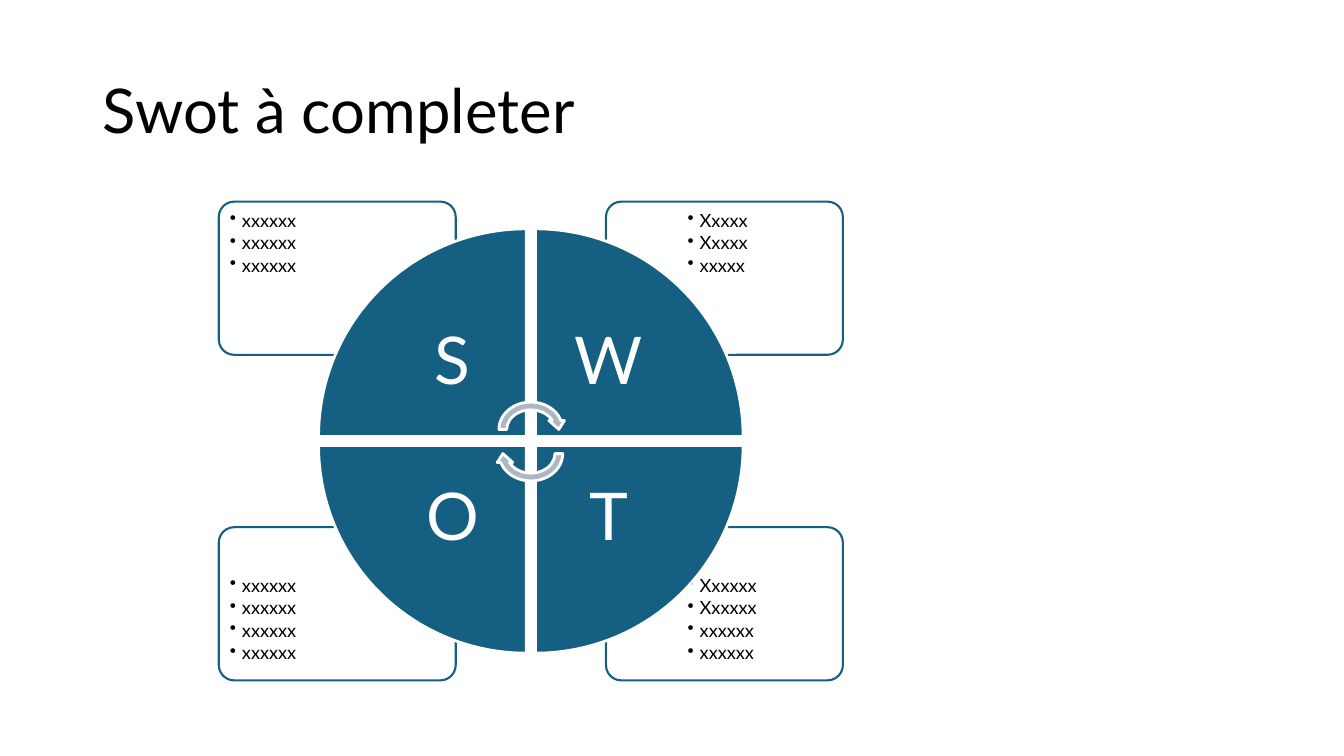
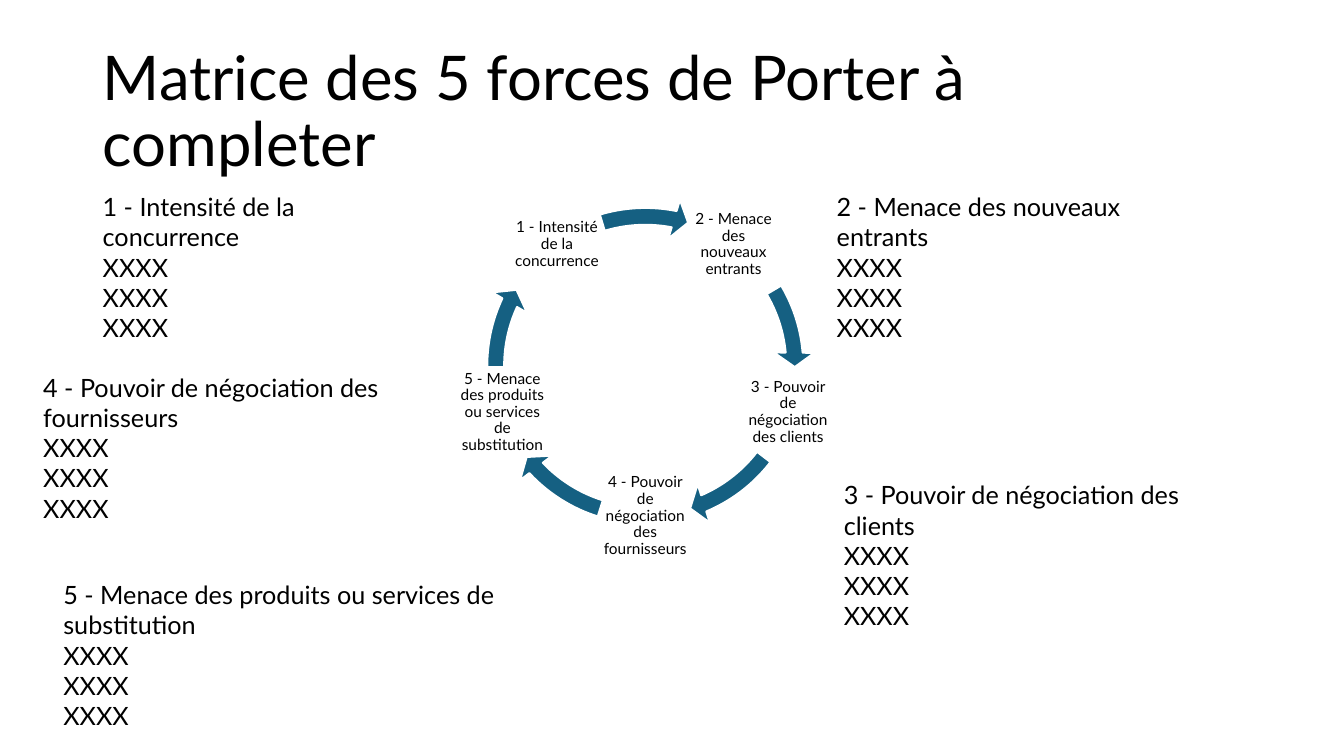
"""Build a SWOT slide and a five forces slide, both ready to be filled in."""
import math

import lxml.etree
import pptx
import pptx.dml.color
import pptx.enum.shapes
import pptx.enum.text
import pptx.oxml.ns
import pptx.util

Inches = pptx.util.Inches
Pt = pptx.util.Pt
SHAPES = pptx.enum.shapes.MSO_SHAPE
ALIGN = pptx.enum.text.PP_ALIGN
ANCHOR = pptx.enum.text.MSO_ANCHOR

FONT = "Lato"
BLACK, WHITE, BLUE, GREY = "000000", "FFFFFF", "156082", "ACB7C1"
TITLE_ONLY = 5
TITLE_BOX = (0.92, 0.4, 11.5, 1.45)

SWOT_TITLE = "Swot à completer"
SWOT = [
    ("S", 0, 0, ["xxxxxx"] * 3),
    ("W", 1, 0, ["Xxxxx", "Xxxxx", "xxxxx"]),
    ("T", 1, 1, ["Xxxxxx", "Xxxxxx", "xxxxxx", "xxxxxx"]),
    ("O", 0, 1, ["xxxxxx"] * 4),
]
WEDGE, WEDGE_GAP, LETTER_BOX = 2.06, 0.09, 1.46
WHEEL_LEFT, WHEEL_TOP = 3.16, 2.27

PORTER_TITLE = "Matrice des 5 forces de Porter à completer"
TO_FILL = ["XXXX"] * 3
FORCES = [
    ("1 - Intensité de la concurrence", (0.92, 1.85, 3.49, 1.31), (253.29, 281.12)),
    ("2 - Menace des nouveaux entrants", (8.2, 1.85, 3.91, 1.31), (329.42, 354.91)),
    ("3 - Pouvoir de négociation des clients", (8.27, 4.71, 4.22, 1.31), (37.53, 66.94)),
    ("4 - Pouvoir de négociation des fournisseurs", (0.33, 3.64, 4.02, 1.62), (107.47, 136.88)),
    ("5 - Menace des produits ou services de substitution", (0.53, 5.7, 5.78, 1.31), (179.5, 204.99)),
]
CYCLE_X, CYCLE_Y, CYCLE_RADIUS = 6.4, 3.63, 1.49
CYCLE_SIZE, LABEL_SIZE = 3.37, 0.9
FIRST_ANGLE = -126
DEGREE = 0.6


def color(value):
    return pptx.dml.color.RGBColor.from_string(value)


def place(box):
    return [Inches(length) for length in box]


def write(text_frame, lines, size, ink=BLACK, align=ALIGN.LEFT, spacing=1.0, after=0):
    text_frame.text = "\n".join(lines)
    for paragraph in text_frame.paragraphs:
        paragraph.alignment = align
        paragraph.line_spacing = spacing
        paragraph.space_after = Pt(after)
        for run in paragraph.runs:
            run.font.name = FONT
            run.font.size = Pt(size)
            run.font.color.rgb = color(ink)


def add_text(slide, box, lines, size, inset=None, anchor=ANCHOR.TOP, **style):
    text_frame = slide.shapes.add_textbox(*place(box)).text_frame
    text_frame.word_wrap = True
    text_frame.vertical_anchor = anchor
    if inset is not None:
        text_frame.margin_left = text_frame.margin_right = Inches(inset)
        text_frame.margin_top = text_frame.margin_bottom = Inches(inset)
    write(text_frame, lines, size, **style)
    return text_frame


def add_bullets(text_frame, indent):
    for paragraph in text_frame.paragraphs:
        properties = paragraph._p.get_or_add_pPr()
        properties.set("marL", str(Inches(indent)))
        properties.set("indent", str(-Inches(indent)))
        bullet = lxml.etree.SubElement(properties, pptx.oxml.ns.qn("a:buChar"))
        bullet.set("char", "•")


def add_figure(slide, preset, box, fill, line, width, rotation=0, adjustments=()):
    shape = slide.shapes.add_shape(preset, *place(box))
    shape.shadow.inherit = False
    shape.fill.solid()
    shape.fill.fore_color.rgb = color(fill)
    shape.line.color.rgb = color(line)
    shape.line.width = Pt(width)
    shape.rotation = rotation
    for index, value in enumerate(adjustments):
        shape.adjustments[index] = value


def add_slide(presentation, title):
    slide = presentation.slides.add_slide(presentation.slide_layouts[TITLE_ONLY])
    write(slide.shapes.title.text_frame, [title], 44, spacing=0.9)
    return slide


def build_swot(presentation):
    slide = add_slide(presentation, SWOT_TITLE)
    for letter, column, row, items in SWOT:
        card = (2.17 + column * 3.84, 2 + row * 3.23, 2.35, 1.52)
        add_figure(slide, SHAPES.ROUNDED_RECTANGLE, card, WHITE, BLUE, 1.5, adjustments=[0.1])
        notes = (2.21 + column * 4.54, 2.03 + row * 3.62, 1.58, 1.08)
        add_bullets(add_text(slide, notes, items, 13, inset=0.07, spacing=0.9, after=2), 0.12)

    step = WEDGE + WEDGE_GAP
    inward = WEDGE - LETTER_BOX
    for quarter, (letter, column, row, items) in enumerate(SWOT):
        left, top = WHEEL_LEFT + column * step, WHEEL_TOP + row * step
        add_figure(slide, SHAPES.PIE_WEDGE, (left, top, WEDGE, WEDGE), BLUE, WHITE, 2, quarter * 90)
        letter_box = (left + inward * (1 - column), top + inward * (1 - row), LETTER_BOX, LETTER_BOX)
        add_text(slide, letter_box, [letter], 47, inset=0.37, anchor=ANCHOR.MIDDLE,
                 ink=WHITE, align=ALIGN.CENTER, spacing=0.9)

    for top, rotation in ((3.95, 0), (4.19, 180)):
        add_figure(slide, SHAPES.CIRCULAR_ARROW, (4.91, top, 0.71, 0.62), GREY, WHITE, 2, rotation)


def build_porter(presentation):
    slide = add_slide(presentation, PORTER_TITLE)
    ring = (CYCLE_X - CYCLE_SIZE / 2, CYCLE_Y - CYCLE_SIZE / 2, CYCLE_SIZE, CYCLE_SIZE)
    for index, (force, note_box, (start, end)) in enumerate(FORCES):
        angle = math.radians(FIRST_ANGLE + index * 360 / len(FORCES))
        label_box = (CYCLE_X + CYCLE_RADIUS * math.cos(angle) - LABEL_SIZE / 2,
                     CYCLE_Y + CYCLE_RADIUS * math.sin(angle) - LABEL_SIZE / 2,
                     LABEL_SIZE, LABEL_SIZE)
        add_text(slide, label_box, [force], 11, inset=0.02, anchor=ANCHOR.MIDDLE,
                 align=ALIGN.CENTER, spacing=0.9)
        add_figure(slide, SHAPES.CIRCULAR_ARROW, ring, BLUE, WHITE, 1.5,
                   adjustments=[0.05, 5.59 * DEGREE, end * DEGREE, start * DEGREE, 0.06])
        add_text(slide, note_box, [force] + TO_FILL, 18)


def main():
    presentation = pptx.Presentation()
    presentation.slide_width, presentation.slide_height = Inches(13.33), Inches(7.5)
    title = presentation.slide_layouts[TITLE_ONLY].placeholders[0]
    title.left, title.top, title.width, title.height = place(TITLE_BOX)
    title.text_frame.vertical_anchor = ANCHOR.MIDDLE
    build_swot(presentation)
    build_porter(presentation)
    presentation.save("out.pptx")


if __name__ == "__main__":
    main()
